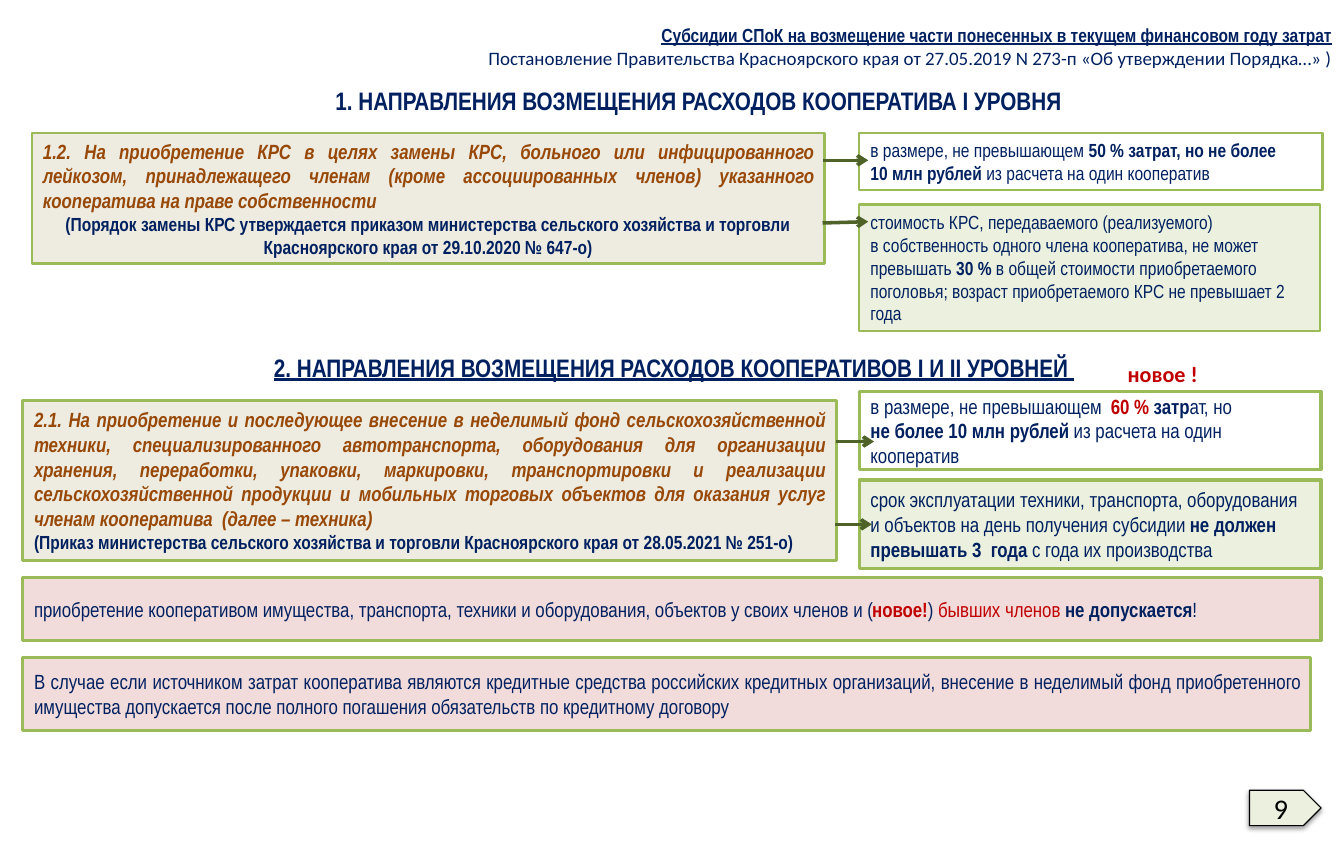
from dataclasses import dataclass

from lxml import etree
from pptx import Presentation
from pptx.dml.color import RGBColor
from pptx.enum.shapes import MSO_CONNECTOR, MSO_SHAPE
from pptx.enum.text import MSO_ANCHOR as ANCHOR, MSO_AUTO_SIZE as FIT, PP_ALIGN as AL
from pptx.oxml import parse_xml
from pptx.oxml.ns import nsdecls, qn
from pptx.util import Cm, Pt


@dataclass(frozen=True)
class Theme:
    navy: str = "002060"
    brown: str = "984807"
    red: str = "C00000"
    black: str = "000000"
    white: str = "FFFFFF"
    beige: str = "EEECE1"
    mint: str = "EBF1DE"
    rose: str = "F2DCDB"
    green: str = "9BBB59"
    olive: str = "4F6228"
    narrow: str = "Arial Narrow"
    wide: str = "Calibri"
    small: int = 12
    body: int = 13
    label: int = 14
    heading: int = 16
    number: int = 18


T = Theme()

STYLES = {
    "plain": (T.narrow, T.navy, ""),
    "bold": (T.narrow, T.navy, "b"),
    "under": (T.narrow, T.navy, "bu"),
    "direction": (T.narrow, T.brown, "bi"),
    "red": (T.narrow, T.red, ""),
    "red bold": (T.narrow, T.red, "b"),
    "source": (T.wide, T.navy, ""),
    "new": (T.wide, T.red, "b"),
    "number": (T.wide, T.black, ""),
}


def write_text(tf, paragraphs):
    tf.word_wrap = True
    for i, (align, size, runs) in enumerate(paragraphs):
        p = tf.paragraphs[0] if i == 0 else tf.add_paragraph()
        p.alignment = align
        for text, style in runs:
            font, color, marks = STYLES[style]
            for n, part in enumerate(text.split("\n")):
                if n:
                    p.add_line_break()
                if not part:
                    continue
                r = p.add_run()
                r.text = part
                r.font.name = font
                r.font.size = Pt(size)
                r.font.color.rgb = RGBColor.from_string(color)
                r.font.bold = "b" in marks
                r.font.italic = "i" in marks
                r.font.underline = "u" in marks


prs = Presentation()
prs.slide_width, prs.slide_height = Cm(30), Cm(19.05)
slide = prs.slides.add_slide(prs.slide_layouts[5])

title = slide.shapes.title
title.left, title.top, title.width, title.height = Cm(5), Cm(0.41), Cm(25), Cm(1.27)
title.text_frame.auto_size = FIT.NONE
title.text_frame.vertical_anchor = ANCHOR.TOP
write_text(title.text_frame, [
    (AL.RIGHT, T.small, [("Субсидии СПоК на возмещение части понесенных в текущем финансовом году затрат", "under")]),
    (AL.RIGHT, T.small, [("Постановление Правительства Красноярского края от 27.05.2019 N 273-п «Об утверждении Порядка…» )", "source")]),
])

labels = [
    ((2.69, 1.78, 25.81, 0.94), AL.CENTER, T.heading,
     "1. НАПРАВЛЕНИЯ ВОЗМЕЩЕНИЯ РАСХОДОВ КООПЕРАТИВА I УРОВНЯ", "bold"),
    ((0.51, 7.75, 29.08, 0.94), AL.CENTER, T.heading,
     "2. НАПРАВЛЕНИЯ ВОЗМЕЩЕНИЯ РАСХОДОВ КООПЕРАТИВОВ I И II УРОВНЕЙ ", "under"),
    ((24.92, 7.92, 3.76, 0.86), AL.LEFT, T.label, "новое !", "new"),
]
for at, align, size, text, style in labels:
    sp = slide.shapes.add_textbox(*map(Cm, at))
    write_text(sp.text_frame, [(align, size, [(text, style)])])

LIMIT_X = 19.18
EDGE_X = 0.51
boxes = [
    ((0.71, 2.97, 17.7, 2.92), T.beige, 1.5, [
        (AL.JUSTIFY, T.body, [("1.2. На приобретение КРС в целях замены КРС, больного или инфицированного лейкозом, принадлежащего членам (кроме ассоциированных членов) указанного кооператива на праве собственности", "direction")]),
        (AL.CENTER, T.small, [("(Порядок замены КРС утверждается приказом министерства сельского хозяйства и торговли Красноярского края от 29.10.2020 № 647-о)", "bold")]),
    ]),
    ((LIMIT_X, 2.97, 10.34, 1.27), T.white, 1.5, [
        (AL.LEFT, T.small, [
            ("в размере, не превышающем ", "plain"),
            ("50 % затрат, но не более \n10 млн рублей", "bold"),
            (" из расчета на один кооператив", "plain"),
        ]),
    ]),
    ((LIMIT_X, 4.57, 10.29, 2.82), T.mint, 1.5, [
        (AL.LEFT, T.small, [
            ("стоимость КРС, передаваемого (реализуемого) \nв собственность одного члена кооператива, не может превышать ", "plain"),
            ("30 % ", "bold"),
            ("в общей стоимости приобретаемого поголовья; возраст приобретаемого КРС не превышает 2 года", "plain"),
        ]),
    ]),
    ((EDGE_X, 8.94, 18.16, 3.58), T.beige, 2, [
        (AL.JUSTIFY, T.body, [("2.1. На приобретение и последующее внесение в неделимый фонд сельскохозяйственной техники, специализированного автотранспорта, оборудования для организации хранения, переработки, упаковки, маркировки, транспортировки и реализации сельскохозяйственной продукции и мобильных торговых объектов для оказания услуг членам кооператива  (далее – техника)", "direction")]),
        (AL.JUSTIFY, T.small, [("(Приказ министерства сельского хозяйства и торговли Красноярского края от 28.05.2021 № 251-о)", "bold")]),
    ]),
    ((LIMIT_X, 8.74, 10.31, 1.75), T.white, 2, [
        (AL.LEFT, T.body, [
            ("в размере, не превышающем  ", "plain"),
            ("60 %", "red bold"),
            (" затр", "bold"),
            ("ат, но \n", "plain"),
            ("не более 10 млн рублей", "bold"),
            (" из расчета на один кооператив", "plain"),
        ]),
    ]),
    ((LIMIT_X, 10.72, 10.31, 1.98), T.mint, 2, [
        (AL.LEFT, T.body, [
            ("срок эксплуатации техники, транспорта, оборудования и объектов на день получения субсидии ", "plain"),
            ("не должен превышать 3  года", "bold"),
            (" с года их производства", "plain"),
        ]),
    ]),
    ((EDGE_X, 12.9, 28.98, 1.4), T.rose, 2, [
        (AL.JUSTIFY, T.body, [
            ("приобретение кооперативом имущества, транспорта, техники и оборудования, объектов у своих членов и (", "plain"),
            ("новое!", "red bold"),
            (") ", "plain"),
            ("бывших членов ", "red"),
            ("не допускается", "bold"),
            ("!", "plain"),
        ]),
    ]),
    ((EDGE_X, 14.68, 28.75, 1.63), T.rose, 2, [
        (AL.JUSTIFY, T.body, [("В случае если источником затрат кооператива являются кредитные средства российских кредитных организаций, внесение в неделимый фонд приобретенного имущества допускается после полного погашения обязательств по кредитному договору", "plain")]),
    ]),
    ((27.89, 17.65, 1.6, 0.79), T.mint, 0.75, [(AL.CENTER, T.number, [("9", "number")])]),
]
for at, fill, weight, paragraphs in boxes:
    is_number = paragraphs[0][1] == T.number
    kind = MSO_SHAPE.PENTAGON if is_number else MSO_SHAPE.RECTANGLE
    sp = slide.shapes.add_shape(kind, *map(Cm, at))
    sp.shadow.inherit = False
    sp.fill.solid()
    sp.fill.fore_color.rgb = RGBColor.from_string(fill)
    sp.line.color.rgb = RGBColor.from_string(T.black if is_number else T.green)
    sp.line.width = Pt(weight)
    sp.text_frame.vertical_anchor = ANCHOR.MIDDLE
    write_text(sp.text_frame, paragraphs)

page_tag = sp
page_tag.element.spPr.find(qn("a:effectLst")).append(parse_xml(
    f'<a:outerShdw {nsdecls("a")} blurRad="{Pt(3.1)}" dist="{Pt(1.6)}" dir="5400000" rotWithShape="0">'
    f'<a:srgbClr val="{T.black}"><a:alpha val="38000"/></a:srgbClr></a:outerShdw>'))

arrows = [
    (18.36, 3.58, 19.38, 3.58),
    (18.36, 4.98, 19.38, 4.95),
    (18.67, 9.86, 19.51, 9.86),
    (18.64, 11.71, 19.46, 11.71),
]
for ends in arrows:
    arrow = slide.shapes.add_connector(MSO_CONNECTOR.STRAIGHT, *map(Cm, ends))
    arrow.line.color.rgb = RGBColor.from_string(T.olive)
    arrow.line.width = Pt(2.25)
    etree.SubElement(arrow.line._get_or_add_ln(), qn("a:tailEnd"), type="arrow")
    etree.SubElement(arrow._element.spPr, qn("a:effectLst"))

prs.save("out.pptx")
